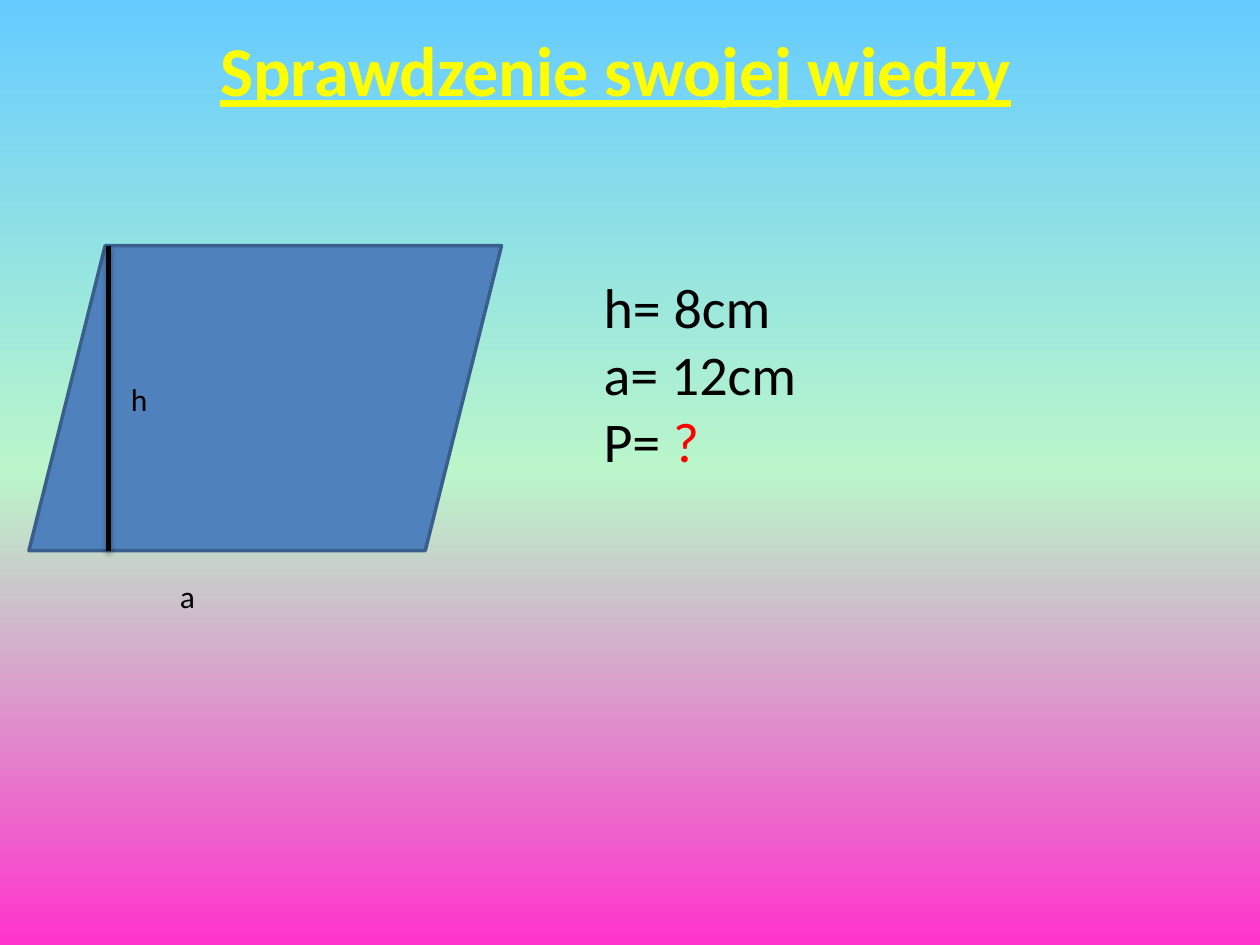
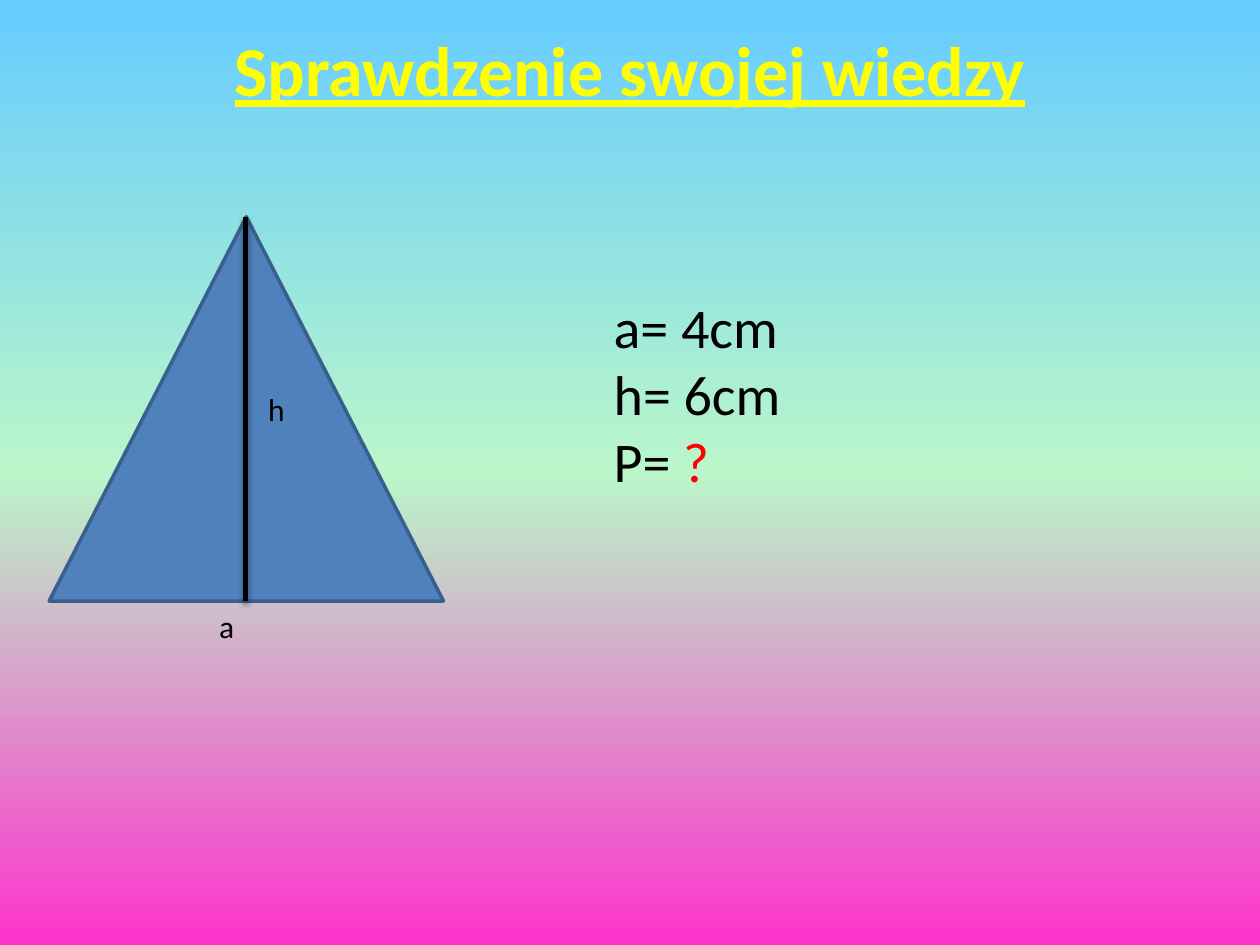
"""Two geometry quiz slides: area of a parallelogram and of a triangle."""
from copy import deepcopy
from dataclasses import dataclass

from lxml.etree import SubElement
from pptx import Presentation
from pptx.dml.color import RGBColor
from pptx.enum.shapes import MSO_CONNECTOR, MSO_SHAPE as Shape
from pptx.enum.text import MSO_ANCHOR, MSO_AUTO_SIZE, PP_ALIGN
from pptx.oxml.ns import qn
from pptx.slide import Slide, SlideMaster
from pptx.text.text import TextFrame
from pptx.util import Inches, Pt

FONT = "Calibri"
TITLE = "Sprawdzenie swojej wiedzy"
SKY = RGBColor(0x66, 0xCC, 0xFF)
MINT = RGBColor(0xBA, 0xF6, 0xCA)
PINK = RGBColor(0xFF, 0x33, 0xCC)
YELLOW = RGBColor(0xFF, 0xFF, 0x00)
BLUE = RGBColor(0x4F, 0x81, 0xBD)
DARK_BLUE = RGBColor(0x3A, 0x5F, 0x8C)
BLACK = RGBColor(0x00, 0x00, 0x00)
RED = RGBColor(0xFF, 0x00, 0x00)


@dataclass(frozen=True)
class Box:
    left: float
    top: float
    width: float
    height: float

    def lengths(self) -> list[Inches]:
        return [Inches(v) for v in (self.left, self.top, self.width, self.height)]


@dataclass(frozen=True)
class Label:
    text: str
    box: Box


@dataclass(frozen=True)
class Exercise:
    title_width: float
    figure: Shape
    figure_box: Box
    height_x: float
    labels: tuple[Label, ...]
    givens: tuple[str, ...]
    givens_box: Box


EXERCISES = (
    Exercise(9.77, Shape.PARALLELOGRAM, Box(0.23, 1.95, 3.75, 2.42), 0.86,
             (Label("h", Box(0.94, 2.97, 0.47, 0.4)),
              Label("a", Box(1.33, 4.53, 0.47, 0.4))),
             ("h= 8cm", "a= 12cm"), Box(4.69, 2.11, 4.06, 1.72)),
    Exercise(10, Shape.ISOSCELES_TRIANGLE, Box(0.39, 1.72, 3.13, 3.05), 1.95,
             (Label("h", Box(2.03, 3.05, 0.63, 0.4)),
              Label("a", Box(1.64, 4.77, 0.86, 0.4))),
             ("a= 4cm", "h= 6cm"), Box(4.77, 2.27, 5, 1.72)),
)


def place(sp, box: Box) -> None:
    sp.left, sp.top, sp.width, sp.height = box.lengths()


def format_text(tf: TextFrame, size: int, color: RGBColor) -> None:
    tf.word_wrap = True
    tf.auto_size = MSO_AUTO_SIZE.SHAPE_TO_FIT_TEXT
    tf.vertical_anchor = MSO_ANCHOR.TOP
    for p in tf.paragraphs:
        for r in p.runs:
            r.font.name = FONT
            r.font.size = Pt(size)
            r.font.color.rgb = color


def paint_background(master: SlideMaster) -> None:
    fill = master.background.fill
    fill.gradient()
    fill.gradient_angle = 270
    stops = master.element.find(".//" + qn("p:bg")).find(".//" + qn("a:gsLst"))
    stops.insert(1, deepcopy(stops[0]))
    for stop, position, color in zip(fill.gradient_stops, (0, 0.5, 1), (SKY, MINT, PINK)):
        stop.position = position
        stop.color.rgb = color


def add_title(s: Slide, width: float) -> None:
    sp = s.shapes.title
    place(sp, Box(0, 0.16, width, 0.77))
    tf = sp.text_frame
    tf.text = TITLE
    format_text(tf, 40, YELLOW)
    p = tf.paragraphs[0]
    p.alignment = PP_ALIGN.CENTER
    font = p.runs[0].font
    font.bold = font.underline = True


def add_figure(s: Slide, kind: Shape, box: Box) -> None:
    sp = s.shapes.add_shape(kind, *box.lengths())
    sp.shadow.inherit = False
    sp.fill.solid()
    sp.fill.fore_color.rgb = BLUE
    sp.line.color.rgb = DARK_BLUE
    sp.line.width = Pt(2)


def add_height(s: Slide, x: float, box: Box) -> None:
    line = s.shapes.add_connector(MSO_CONNECTOR.STRAIGHT, Inches(x), Inches(box.top),
                                  Inches(x), Inches(box.top + box.height))
    line.line.color.rgb = BLACK
    line.line.width = Pt(3)
    effects = SubElement(line.element.find(qn("p:spPr")), qn("a:effectLst"))
    shadow = SubElement(effects, qn("a:outerShdw"), blurRad=str(Pt(3.1)),
                        dist=str(Pt(1.8)), dir="5400000", rotWithShape="0")
    color = SubElement(shadow, qn("a:srgbClr"), val=str(BLACK))
    SubElement(color, qn("a:alpha"), val="35000")


def add_label(s: Slide, label: Label) -> None:
    tf = s.shapes.add_textbox(*label.box.lengths()).text_frame
    tf.text = label.text
    format_text(tf, 18, BLACK)


def add_givens(s: Slide, givens: tuple[str, ...], box: Box) -> None:
    sp = s.placeholders[1]
    place(sp, box)
    tf = sp.text_frame
    tf.text = "\n".join((*givens, "P= "))
    question = tf.paragraphs[-1].add_run()
    question.text = "?"
    format_text(tf, 32, BLACK)
    question.font.color.rgb = RED
    for p in tf.paragraphs:
        p.space_before = Pt(0)
        props = p._p.get_or_add_pPr()
        props.set("marL", "0")
        props.set("indent", "0")
        SubElement(props, qn("a:buNone"))


def add_exercise(prs, exercise: Exercise) -> None:
    s = prs.slides.add_slide(prs.slide_layouts[1])
    add_title(s, exercise.title_width)
    add_figure(s, exercise.figure, exercise.figure_box)
    add_height(s, exercise.height_x, exercise.figure_box)
    for label in exercise.labels:
        add_label(s, label)
    add_givens(s, exercise.givens, exercise.givens_box)


def main() -> None:
    prs = Presentation()
    prs.slide_width, prs.slide_height = Inches(10), Inches(7.5)
    paint_background(prs.slide_master)
    for exercise in EXERCISES:
        add_exercise(prs, exercise)
    prs.save("out.pptx")


if __name__ == "__main__":
    main()
